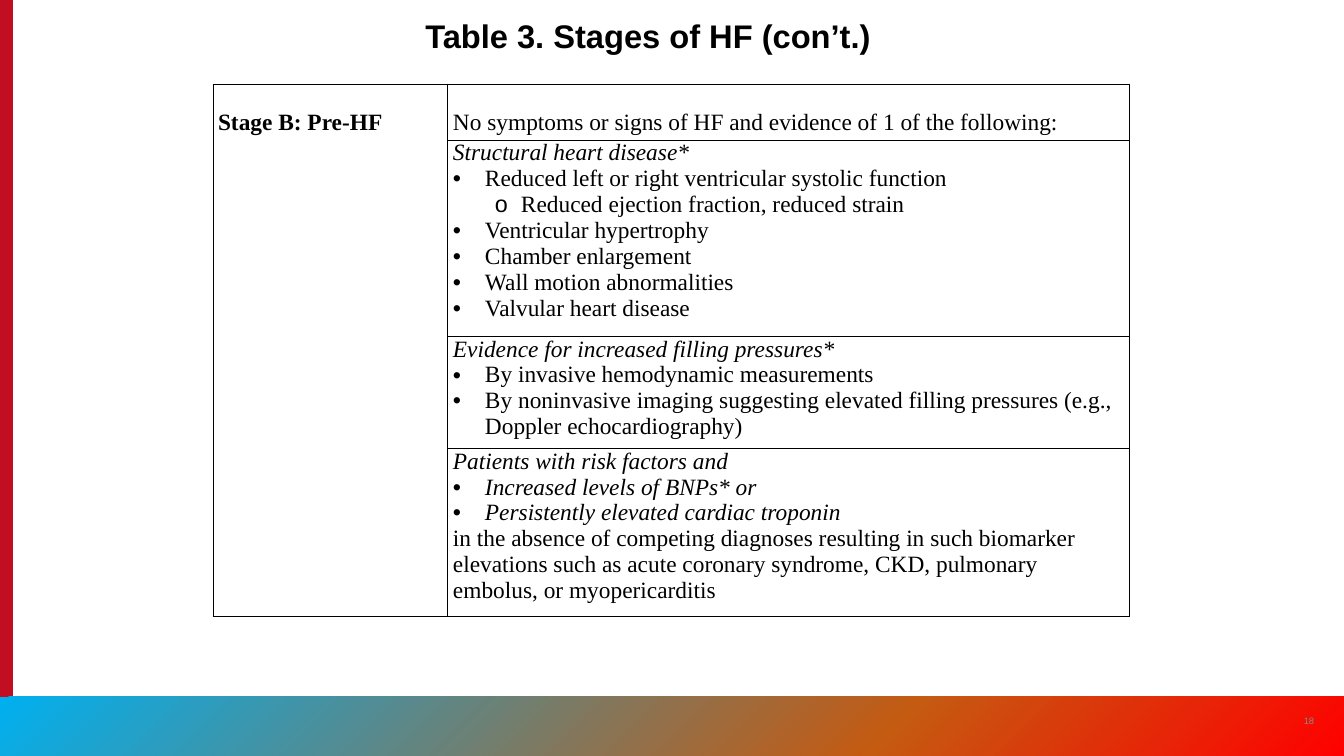
from lxml import etree
from pptx import Presentation
from pptx.dml.color import RGBColor
from pptx.enum.shapes import MSO_SHAPE as SHAPE
from pptx.enum.text import MSO_ANCHOR as ANCHOR, PP_ALIGN as ALIGN
from pptx.oxml import parse_xml
from pptx.oxml.ns import nsdecls, qn
from pptx.util import Pt

PX = 914400 / 84


def px(*lengths):
    return [round(n * PX) for n in lengths]


def add_run(p, text, size, font, color, bold=False, italic=False):
    r = p.add_run()
    r.text = text
    r.font.size, r.font.name = Pt(size), font
    r.font.bold, r.font.italic = bold, italic
    r.font.color.rgb = RGBColor.from_string(color)


prs = Presentation()
prs.slide_width, prs.slide_height = px(1344, 756)
s = prs.slides.add_slide(prs.slide_layouts[6])

side_bar = s.shapes.add_shape(SHAPE.RECTANGLE, *px(0, 0, 13, 756))
side_bar.fill.solid()
side_bar.fill.fore_color.rgb = RGBColor.from_string("C10E21")
footer = s.shapes.add_shape(SHAPE.RECTANGLE, *px(0, 697, 1344, 59))
for sp in (side_bar, footer):
    sp.shadow.inherit = False
    sp.line.fill.background()

stops = "".join(
    f'<a:gs pos="{pos * 1000}"><a:srgbClr val="{color}"/></a:gs>'
    for pos, color in [(0, "00B0F0"), (66, "C55A11"), (100, "FF0000")]
)
gradient = parse_xml(
    f'<a:gradFill {nsdecls("a")} rotWithShape="1"><a:gsLst>{stops}</a:gsLst>'
    '<a:lin ang="2700000" scaled="0"/></a:gradFill>'
)
footer.element.spPr.find(qn("a:prstGeom")).addnext(gradient)

title = s.shapes.add_textbox(*px(417, 16, 510, 53))
tf = title.text_frame
tf.word_wrap = True
p = tf.paragraphs[0]
p.line_spacing = 0.9
add_run(p, "Table 3. Stages of HF (con’t.)", 28, "Arial", "000000", bold=True)

number = s.shapes.add_textbox(*px(1289, 701, 40, 40))
tf = number.text_frame
tf.word_wrap = True
tf.vertical_anchor = ANCHOR.MIDDLE
p = tf.paragraphs[0]
p.alignment = ALIGN.CENTER
add_run(p, "18", 8, "Arial", "8A8B8A")

BULLETS = {"dot": ("•", 0, 32, -32), "circle": ("o", 1, 68, -26)}
stage = [("Stage B: Pre-HF", "tall", "bold")]
criteria = [
    [("No symptoms or signs of HF and evidence of 1 of the following:", "tall", "")],
    [
        ("Structural heart disease*", "", "italic"),
        ("Reduced left or right ventricular systolic function", "dot", ""),
        ("Reduced ejection fraction, reduced strain", "circle", ""),
        ("Ventricular hypertrophy", "dot", ""),
        ("Chamber enlargement", "dot", ""),
        ("Wall motion abnormalities", "dot", ""),
        ("Valvular heart disease", "dot", ""),
    ],
    [
        ("Evidence for increased filling pressures*", "", "italic"),
        ("By invasive hemodynamic measurements", "dot", ""),
        ("By noninvasive imaging suggesting elevated filling pressures "
         "(e.g., Doppler echocardiography)", "dot", ""),
    ],
    [
        ("Patients with risk factors and", "", "italic"),
        ("Increased levels of BNPs* or", "dot", "italic"),
        ("Persistently elevated cardiac troponin", "dot", "italic"),
        ("in the absence of competing diagnoses resulting in such biomarker "
         "elevations such as acute coronary syndrome, CKD, pulmonary embolus, "
         "or myopericarditis", "", ""),
    ],
]

table = s.shapes.add_table(4, 2, *px(213, 84, 917, 507)).table
table.first_row = table.horz_banding = False
for col, width in zip(table.columns, px(235, 682)):
    col.width = width
for row, height in zip(table.rows, px(51, 189, 106, 161)):
    row.height = height
table.cell(0, 0).merge(table.cell(3, 0))

for cell in table.iter_cells():
    cell.fill.background()
    cell.margin_left, cell.margin_top, cell.margin_right, cell.margin_bottom = px(5, 0, 5, 0)
    tcPr = cell._tc.get_or_add_tcPr()
    for i, side in enumerate(("lnL", "lnR", "lnT", "lnB")):
        tcPr.insert(i, parse_xml(
            f'<a:{side} {nsdecls("a")} w="12700"><a:solidFill>'
            f'<a:srgbClr val="000000"/></a:solidFill></a:{side}>'
        ))

contents = [(table.cell(0, 0), stage)]
contents += [(table.cell(i, 1), lines) for i, lines in enumerate(criteria)]
for cell, lines in contents:
    tf = cell.text_frame
    for i, (text, kind, style) in enumerate(lines):
        p = tf.add_paragraph() if i else tf.paragraphs[0]
        if kind == "tall":
            p.line_spacing = 2.0
        if kind in BULLETS:
            char, p.level, margin, indent = BULLETS[kind]
            pPr = p._p.get_or_add_pPr()
            for name, length in zip(("marL", "indent"), px(margin, indent)):
                pPr.set(name, str(length))
            etree.SubElement(pPr, qn("a:buFont"), typeface="Arial")
            etree.SubElement(pPr, qn("a:buChar"), char=char)
        add_run(p, text, 20, "Times New Roman", "000000", style == "bold", style == "italic")

prs.save("out.pptx")
